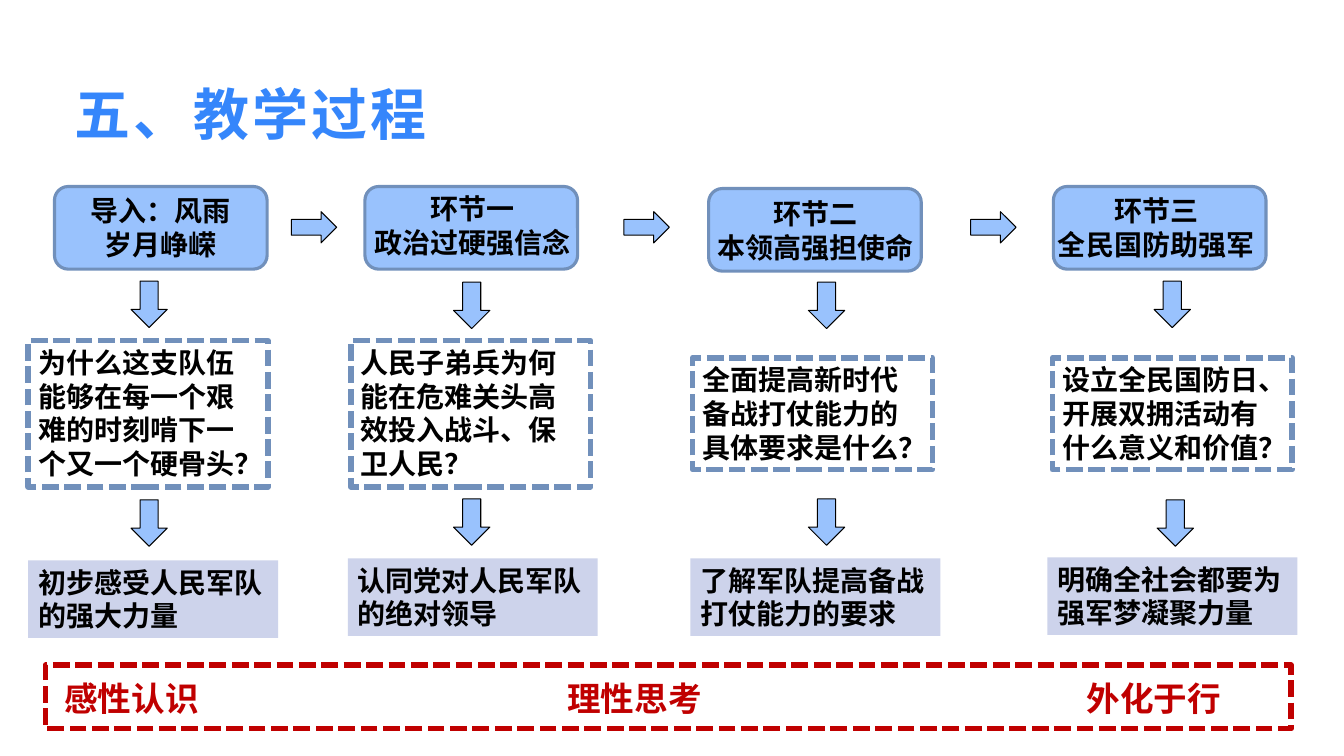
from dataclasses import dataclass

from lxml.etree import SubElement
from pptx import Presentation
from pptx.dml.color import RGBColor
from pptx.enum.dml import MSO_LINE_DASH_STYLE as Dash
from pptx.enum.shapes import MSO_AUTO_SHAPE_TYPE as Preset
from pptx.enum.text import MSO_ANCHOR as Anchor, PP_ALIGN as Align
from pptx.oxml.ns import qn
from pptx.shapes.autoshape import Shape
from pptx.slide import Slide
from pptx.util import Inches, Pt

CELL = 0.1  # inches per grid column and per grid row
COLUMNS, ROWS = 133.33, 75
CJK_FONT, LATIN_FONT = "Noto Sans CJK SC", "Arial"
COLORS = {
    "title": "3586FB",
    "stage": "99C2FD",
    "border": "7190BB",
    "goal": "CDD3EB",
    "red": "C00000",
    "black": "000000",
}


@dataclass(frozen=True)
class Area:
    """A rectangle in grid columns and rows."""
    column: float
    row: float
    width: float
    height: float

    def lengths(self) -> list[int]:
        return [Inches(cells * CELL) for cells in
                (self.column, self.row, self.width, self.height)]


@dataclass(frozen=True)
class Words:
    text: str
    size: float = 20
    color: str = "black"
    font: str = CJK_FONT
    align: Align = Align.LEFT
    spacing: float = 0


@dataclass(frozen=True)
class Border:
    color: str
    width: float
    dashed: bool = False


@dataclass(frozen=True)
class Stage:
    """One teaching stage, read from top to bottom."""
    heading: str
    card: tuple[float, float]
    label: Area
    question: str
    question_area: Area
    goal: str
    goal_corner: tuple[float, float]
    arrows: tuple[tuple[float, float], tuple[float, float]]


STAGES = [
    Stage("导入：风雨岁月峥嵘", (5.4, 18.5), Area(6.6, 18.7, 18.6, 7.7),
          "为什么这支队伍能够在每一个艰难的时刻啃下一个又一个硬骨头？",
          Area(2.8, 33.8, 23.8, 14.5),
          "初步感受人民军队的强大力量", (2.8, 55.6), ((13, 27.9), (13, 49.6))),
    Stage("环节一\n政治过硬强信念", (36.2, 18.5), Area(35.8, 18.5, 22.2, 7.7),
          "人民子弟兵为何能在危难关头高效投入战斗、保卫人民？",
          Area(34.8, 33.8, 23.8, 14.5),
          "认同党对人民军队的绝对领导", (34.5, 55.4), ((45, 28), (45, 49.5))),
    Stage("环节二\n本领高强担使命", (70.3, 18.7), Area(69.3, 19, 23.2, 7.7),
          "全面提高新时代备战打仗能力的具体要求是什么？",
          Area(68.7, 35.5, 23.8, 11.1),
          "了解军队提高备战打仗能力的要求", (68.5, 55.4), ((80.2, 28), (80.2, 49.5))),
    Stage("环节三\n全民国防助强军", (104.5, 18.5), Area(103.8, 18.7, 21.8, 7.7),
          "设立全民国防日、开展双拥活动有什么意义和价值？",
          Area(104.4, 35.5, 23.8, 11.1),
          "明确全社会都要为强军梦凝聚力量", (103.9, 55.3),
          ((114.5, 27.9), (114.8, 49.6))),
]
STEP_COLUMNS = (28.9, 61.9, 96.3)
LEVELS = [
    ("感性认识", Area(5.4, 66.8, 17.2, 5)),
    ("理性思考", Area(55.3, 66.8, 18.8, 5)),
    ("外化于行", Area(106.8, 66.8, 16.5, 5)),
]
THIN = Border("black", 0.75)


def rgb(name: str) -> RGBColor:
    return RGBColor.from_string(COLORS[name])


def write(box: Shape, words: Words) -> None:
    frame = box.text_frame
    frame.word_wrap = True
    frame.vertical_anchor = Anchor.TOP
    frame.text = words.text
    for para in frame.paragraphs:
        para.alignment = words.align
        for span in para.runs:
            font = span.font
            font.size, font.bold, font.name = Pt(words.size), True, words.font
            font.color.rgb = rgb(words.color)
            properties = span._r.get_or_add_rPr()
            SubElement(properties, qn("a:ea")).set("typeface", CJK_FONT)
            if words.spacing:
                properties.set("spc", str(round(words.spacing * 100)))


def add_text(page: Slide, area: Area, words: Words) -> Shape:
    box = page.shapes.add_textbox(*area.lengths())
    write(box, words)
    return box


def add_block(page: Slide, preset: Preset, area: Area, fill: str | None = None,
              border: Border | None = None, words: Words | None = None) -> None:
    block = page.shapes.add_shape(preset, *area.lengths())
    block.shadow.inherit = False
    if fill:
        block.fill.solid()
        block.fill.fore_color.rgb = rgb(fill)
    else:
        block.fill.background()
    if border:
        block.line.color.rgb = rgb(border.color)
        block.line.width = Pt(border.width)
        if border.dashed:
            block.line.dash_style = Dash.SQUARE_DOT
    else:
        block.line.fill.background()
    if words:
        write(block, words)


def add_stage(page: Slide, stage: Stage) -> None:
    add_block(page, Preset.ROUNDED_RECTANGLE, Area(*stage.card, 21.1, 8.2),
              "stage", Border("border", 2.25))
    add_text(page, stage.label, Words(stage.heading, align=Align.CENTER))
    add_block(page, Preset.RECTANGLE, stage.question_area,
              border=Border("border", 4, dashed=True),
              words=Words(stage.question, font=LATIN_FONT))
    add_block(page, Preset.RECTANGLE, Area(*stage.goal_corner, 24.8, 7.7), "goal",
              words=Words(stage.goal, font=LATIN_FONT))
    for corner in stage.arrows:
        add_block(page, Preset.DOWN_ARROW, Area(*corner, 3.6, 4.6), "stage", THIN)


def main() -> None:
    deck = Presentation()
    deck.slide_width, deck.slide_height = Inches(COLUMNS * CELL), Inches(ROWS * CELL)
    page = deck.slides.add_slide(deck.slide_layouts[6])

    title = add_text(page, Area(6.7, 7.6, 120, 6.7),
                     Words("五、教学过程", 40, "title", spacing=2.4))
    frame = title.text_frame
    frame.margin_left = frame.margin_right = Inches(0.07)
    frame.margin_top = frame.margin_bottom = Inches(0.03)

    for stage in STAGES:
        add_stage(page, stage)
    for column in STEP_COLUMNS:
        add_block(page, Preset.RIGHT_ARROW, Area(column, 21, 4.5, 3.1), "stage", THIN)
    for text, area in LEVELS:
        add_text(page, area, Words(text, 24, "red"))
    add_block(page, Preset.RECTANGLE, Area(4.5, 66, 123.6, 6.3),
              border=Border("red", 4, dashed=True))
    deck.save("out.pptx")


if __name__ == "__main__":
    main()
